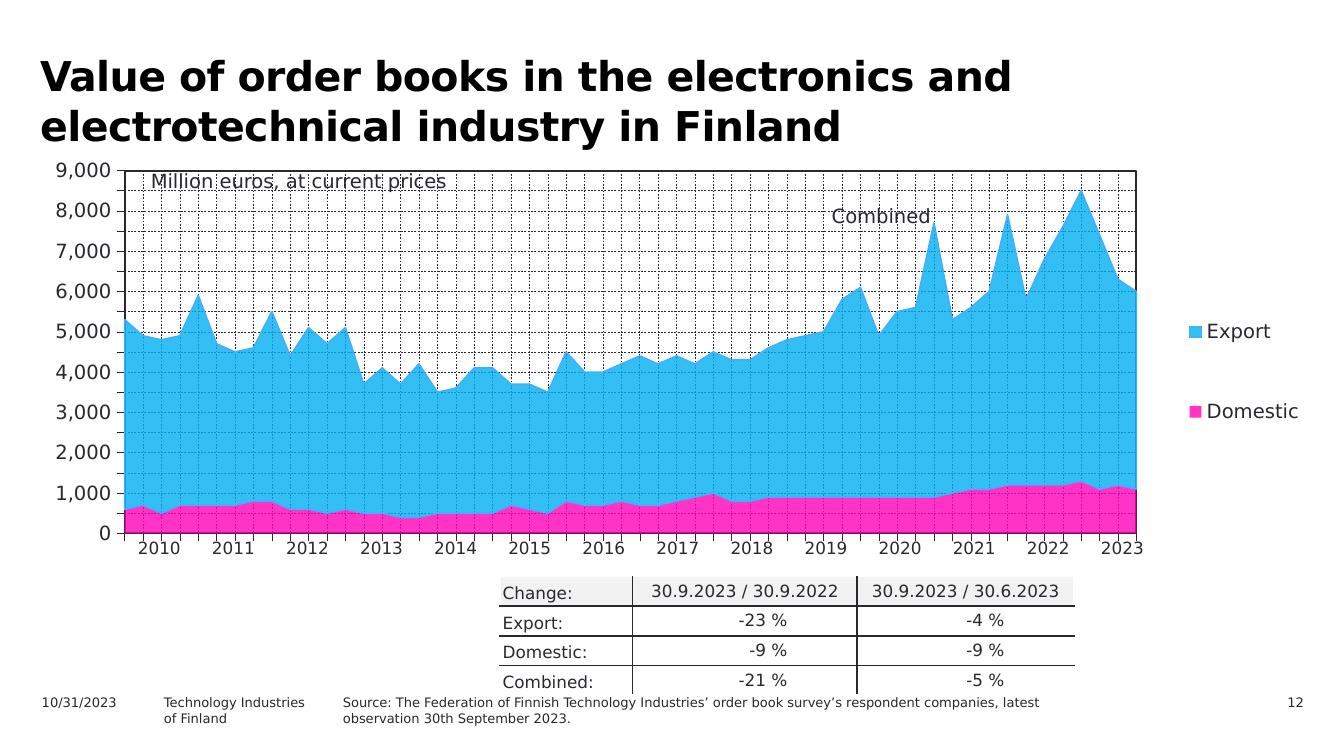
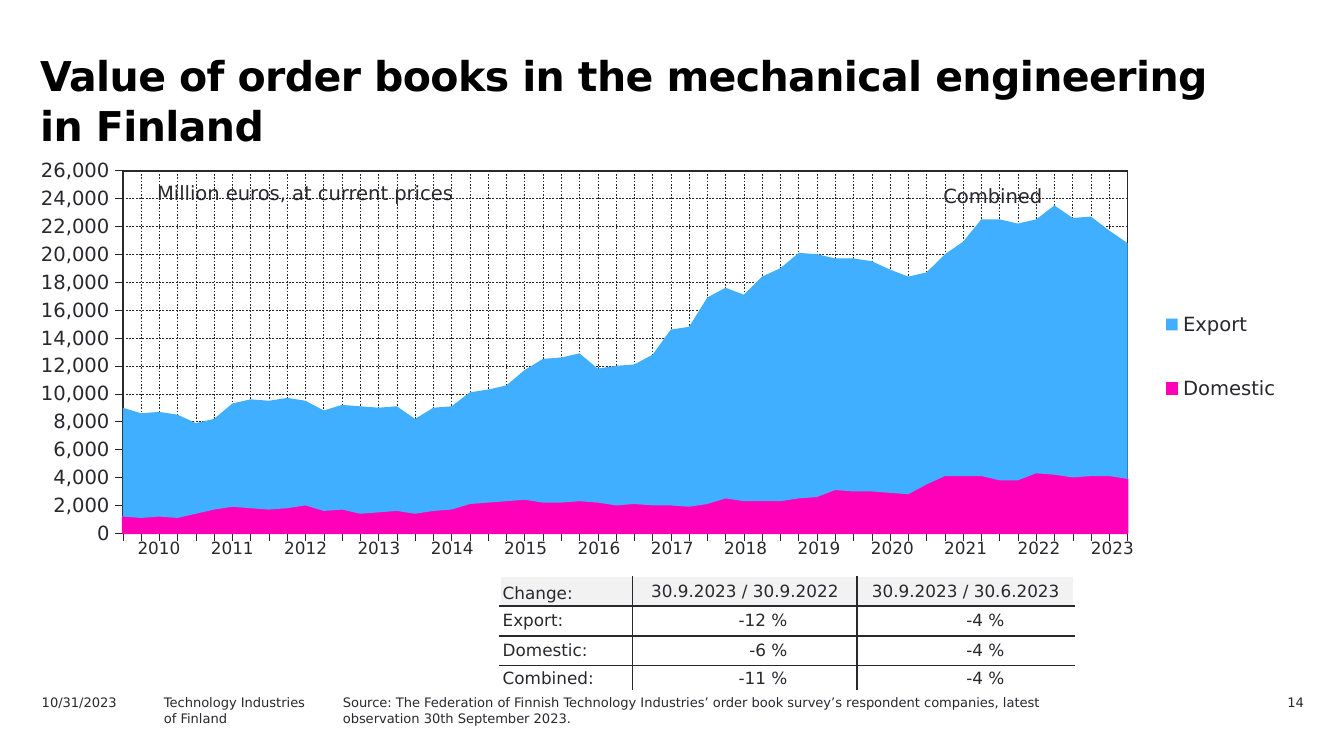
from collections import namedtuple

from lxml.etree import SubElement
from pptx import Presentation
from pptx.chart.data import CategoryChartData
from pptx.dml.color import RGBColor
from pptx.enum.chart import (
    XL_CHART_TYPE as ChartType,
    XL_LEGEND_POSITION as LegendPosition,
    XL_TICK_LABEL_POSITION as LabelPosition,
    XL_TICK_MARK as TickMark,
)
from pptx.enum.dml import MSO_LINE
from pptx.enum.text import MSO_ANCHOR as Anchor, PP_ALIGN as Align
from pptx.oxml import parse_xml
from pptx.oxml.ns import nsdecls, qn
from pptx.util import Cm, Pt

Box = namedtuple("Box", "left top width height")

# Shared look
FONT = "DejaVu Sans"
INK, BLACK, WHITE, HEADER_GREY = "29282E", "000000", "FFFFFF", "F2F2F2"
NO_TABLE_STYLE = "{2D5ABB26-0587-4C30-8999-92F81FD0307C}"
TITLE_BOX = Box(0.71, 0.93, 22.2, 1.8)
FOOTER_BOX = Box(0.79, 13.13, 23.85, 0.46)
CHANGE_BOX = Box(9.45, 10.9, 10.85, 2.24)
YEARS = range(2010, 2024)
PERIODS = ["30.9.2023 / 30.9.2022", "30.9.2023 / 30.6.2023"]
SOURCE = (
    "Source: The Federation of Finnish Technology Industries’ order book survey’s "
    "respondent companies, latest observation 30th September 2023."
)

# Content of each slide
ELECTRONICS = dict(
    title="Value of order books in the electronics and electrotechnical industry in Finland",
    number="12",
    chart_box=Box(0.51, 3, 24.61, 7.75),
    plot_width=0.777,
    legend_layout=(0.88, 0.255, 0.11, 0.53),
    maximum=9000,
    step=500,
    colors=["FF00B8", "00B0F0"],
    opacity=80,
    outlines=[None, "40AFFF"],
    unit_offset=(2.11, 0.07),
    combined_offset=(14.98, 0.76),
    years_width=19.61,
    source_width=13.41,
    last_row=0.56,
    label_anchor=Anchor.BOTTOM,
    changes=[("Export:", "-23 %", "-4 %"), ("Domestic:", "-9 %", "-9 %"),
             ("Combined:", "-21 %", "-5 %")],
    domestic=[
        600, 700, 500, 700, 700, 700, 700, 800, 800, 600, 600, 500, 600, 500,
        500, 400, 400, 500, 500, 500, 500, 700, 600, 500, 800, 700, 700, 800,
        700, 700, 800, 900, 1000, 800, 800, 900, 900, 900, 900, 900, 900, 900,
        900, 900, 900, 1000, 1100, 1100, 1200, 1200, 1200, 1200, 1300, 1100, 1200, 1100],
    export=[
        4700, 4200, 4300, 4200, 5200, 4000, 3800, 3800, 4700, 3800, 4500, 4200, 4500, 3200,
        3600, 3300, 3800, 3000, 3100, 3600, 3600, 3000, 3100, 3000, 3700, 3300, 3300, 3400,
        3700, 3500, 3600, 3300, 3500, 3500, 3500, 3700, 3900, 4000, 4100, 4900, 5200, 4000,
        4600, 4700, 6800, 4300, 4500, 4900, 6700, 4600, 5600, 6400, 7200, 6300, 5100, 4900],
)
MECHANICAL = dict(
    title="Value of order books in the mechanical engineering in Finland",
    number="14",
    chart_box=Box(0.51, 3, 24.13, 7.75),
    plot_width=0.787,
    legend_layout=(0.88, 0.275, 0.11, 0.415),
    maximum=26000,
    step=2000,
    colors=["FF00B8", "40AFFF"],
    opacity=100,
    outlines=["FF00B8", None],
    unit_offset=(2.23, 0.3),
    combined_offset=(17.09, 0.38),
    years_width=19.41,
    source_width=13.82,
    last_row=0.45,
    label_anchor=Anchor.MIDDLE,
    changes=[("Export:", "-12 %", "-4 %"), ("Domestic:", "-6 %", "-4 %"),
             ("Combined:", "-11 %", "-4 %")],
    domestic=[
        1200, 1100, 1200, 1100, 1400, 1700, 1900, 1800, 1700, 1800, 2000, 1600, 1700, 1400,
        1500, 1600, 1400, 1600, 1700, 2100, 2200, 2300, 2400, 2200, 2200, 2300, 2200, 2000,
        2100, 2000, 2000, 1900, 2100, 2500, 2300, 2300, 2300, 2500, 2600, 3100, 3000, 3000,
        2900, 2800, 3500, 4100, 4100, 4100, 3800, 3800, 4300, 4200, 4000, 4100, 4100, 3900],
    export=[
        7800, 7500, 7500, 7400, 6500, 6500, 7400, 7800, 7800, 7900, 7500, 7200, 7500, 7700,
        7500, 7500, 6800, 7400, 7400, 8000, 8100, 8300, 9300, 10300, 10400, 10600, 9600, 10000,
        10000, 10800, 12600, 12900, 14800, 15100, 14800, 16100, 16700, 17600, 17400, 16600,
        16700, 16500, 16000, 15600, 15200, 15900, 16800, 18400, 18700, 18400, 18200, 19300,
        18600, 18600, 17600, 16900],
)


def in_cm(box):
    return [Cm(length) for length in box]


def paint(color_format_owner, color):
    """Give a fill or a font the colour of a hex string."""
    if hasattr(color_format_owner, "solid"):
        color_format_owner.solid()
        color_format_owner = color_format_owner.fore_color
    else:
        color_format_owner = color_format_owner.color
    color_format_owner.rgb = RGBColor.from_string(color)


def style_font(font, size, color=INK, bold=False):
    font.name, font.size, font.bold = FONT, Pt(size), bold
    paint(font, color)


def style_line(line, width, color=INK, dash=None):
    paint(line.fill, color)
    line.width = Pt(width)
    if dash:
        line.dash_style = dash


def set_margins(frame, left, top, right, bottom):
    frame.margin_left, frame.margin_top = Cm(left), Cm(top)
    frame.margin_right, frame.margin_bottom = Cm(right), Cm(bottom)


def add_text(slide, box, text, size, align=Align.LEFT, margins=(0, 0, 0, 0), wrap=True):
    frame = slide.shapes.add_textbox(*in_cm(box)).text_frame
    set_margins(frame, *margins)
    frame.word_wrap = wrap
    frame.text = text
    for paragraph in frame.paragraphs:
        paragraph.alignment = align
        for run in paragraph.runs:
            style_font(run.font, size)


def add_title(slide, box, text):
    title = slide.shapes.title
    title.left, title.top, title.width, title.height = in_cm(box)
    frame = title.text_frame
    set_margins(frame, 0.05, 0, 0, 0)
    frame.word_wrap = True
    frame.vertical_anchor = Anchor.TOP
    frame.text = text
    paragraph = frame.paragraphs[0]
    paragraph.alignment = Align.LEFT
    paragraph.line_spacing = Pt(27)
    paragraph.space_before = Pt(0)
    run = paragraph.runs[0]
    style_font(run.font, 22, BLACK, bold=True)
    run.font._element.set("spc", "-30")


def manual_layout(x, y, width, height, inner=False):
    target = '<c:layoutTarget val="inner"/>' if inner else ""
    return parse_xml(
        f'<c:layout {nsdecls("c")}><c:manualLayout>{target}'
        '<c:xMode val="edge"/><c:yMode val="edge"/>'
        f'<c:x val="{x}"/><c:y val="{y}"/><c:w val="{width}"/><c:h val="{height}"/>'
        "</c:manualLayout></c:layout>"
    )


def set_layout(element, layout, position):
    for previous in element.findall(qn("c:layout")):
        element.remove(previous)
    element.insert(position, layout)


def add_order_chart(slide, box, content):
    data = CategoryChartData(number_format="#,##0")
    data.categories = [str(n + 1) for n in range(len(content["domestic"]))]
    data.add_series("Domestic", content["domestic"])
    data.add_series("Export", content["export"])
    chart = slide.shapes.add_chart(ChartType.AREA_STACKED, *in_cm(box), data).chart
    chart.has_title = False
    style_font(chart.font, 10.5)

    # Series
    for series, color, outline in zip(chart.plots[0].series, content["colors"], content["outlines"]):
        fill = series.format.fill
        paint(fill, color)
        if content["opacity"] < 100:
            swatch = series._element.find(".//" + qn("a:srgbClr"))
            SubElement(swatch, qn("a:alpha")).set("val", str(content["opacity"] * 1000))
        if outline:
            style_line(series.format.line, 0.88, outline)
        else:
            series.format.line.fill.background()

    # Axes
    values, quarters = chart.value_axis, chart.category_axis
    for axis in (values, quarters):
        axis.major_tick_mark = TickMark.OUTSIDE
        axis.minor_tick_mark = TickMark.NONE
        axis.has_major_gridlines = True
        style_line(axis.major_gridlines.format.line, 0.25, dash=MSO_LINE.DASH)
        style_line(axis.format.line, 0.22)
    quarters.tick_label_position = LabelPosition.NONE
    values.minimum_scale, values.maximum_scale = 0, content["maximum"]
    values.major_unit = content["step"]
    values.tick_labels.number_format = "#,##0"
    values.tick_labels.number_format_is_linked = False
    style_font(values.tick_labels.font, 10.5)
    values._element.find(qn("c:crossBetween")).set("val", "midCat")

    # Plot frame and legend
    plot_area = values._element.getparent()
    set_layout(plot_area, manual_layout(0.075, 0.029, content["plot_width"], 0.885, True), 0)
    plot_area.append(parse_xml(
        f'<c:spPr {nsdecls("c", "a")}><a:noFill/><a:ln w="12700"><a:solidFill>'
        f'<a:srgbClr val="{INK}"/></a:solidFill></a:ln></c:spPr>'
    ))
    chart.has_legend = True
    legend = chart.legend
    legend.position = LegendPosition.RIGHT
    legend.include_in_layout = False
    style_font(legend.font, 10.5)
    set_layout(legend._element, manual_layout(*content["legend_layout"]), 1)


def add_chart_notes(slide, box, content):
    notes = [("Million euros, at current prices", content["unit_offset"], 6.2, 0.13, False),
             ("Combined", content["combined_offset"], 2.69, 0.1, True)]
    for text, (right, down), width, inset, wrap in notes:
        note_box = Box(box.left + right, box.top + down, width, 0.69)
        add_text(slide, note_box, text, 10.5, margins=(0.23, inset, 0.23, inset), wrap=wrap)


def add_plain_table(slide, box, rows, columns):
    table = slide.shapes.add_table(rows, columns, *in_cm(box)).table
    table.first_row = table.horz_banding = False
    table._tbl.tblPr.find(qn("a:tableStyleId")).text = NO_TABLE_STYLE
    return table


def fill_cell(cell, text, align, anchor, margins):
    set_margins(cell, *margins)
    cell.vertical_anchor = anchor
    cell.text_frame.text = text
    paragraph = cell.text_frame.paragraphs[0]
    paragraph.alignment = align
    style_font(paragraph.runs[0].font, 9)


def border_cell(cell, colors):
    properties = cell._tc.get_or_add_tcPr()
    for position, (side, color) in enumerate(zip("LRTB", colors)):
        properties.insert(position, parse_xml(
            f'<a:ln{side} {nsdecls("a")} w="12700"><a:solidFill><a:srgbClr val="{color}"/>'
            f"</a:solidFill></a:ln{side}>"
        ))


def add_year_labels(slide, box):
    table = add_plain_table(slide, box, 1, len(YEARS))
    for column, year in enumerate(YEARS):
        table.columns[column].width = Cm(box.width / len(YEARS))
        cell = table.cell(0, column)
        fill_cell(cell, str(year), Align.CENTER, Anchor.TOP, (0, 0.13, 0, 0.13))
        cell.fill.background()


def add_change_table(slide, box, content):
    rows = [("Change:", *PERIODS), *content["changes"]]
    table = add_plain_table(slide, box, len(rows), 3)
    for column, width in zip(table.columns, (2.5, 4.25, 4.1)):
        column.width = Cm(width)
    for r, texts in enumerate(rows):
        last = r == len(rows) - 1
        table.rows[r].height = Cm(content["last_row"] if last else 0.56)
        for c, text in enumerate(texts):
            cell = table.cell(r, c)
            anchor, align, right = Anchor.MIDDLE, Align.CENTER, 0.05
            if c == 0:
                align = Align.LEFT
                anchor = content["label_anchor"] if r else Anchor.BOTTOM
            elif r:
                align, right = Align.RIGHT, 1.32
            fill_cell(cell, text, align, anchor, (0.05, 0.05, right, 0.05))
            paint(cell.fill, WHITE if r else HEADER_GREY)
            outer = (c == 0, c == 2, r == 0, last)
            border_cell(cell, [WHITE if edge else INK for edge in outer])


def add_footer(slide, box, content):
    parts = [
        ("10/31/2023", 0, 2.2, Align.LEFT),
        ("Technology Industries\nof Finland", 2.31, 3.3, Align.LEFT),
        (SOURCE, 5.69, content["source_width"], Align.LEFT),
        (content["number"], box.width - 2.4, 2.4, Align.RIGHT),
    ]
    for text, offset, width, align in parts:
        add_text(slide, Box(box.left + offset, box.top, width, box.height), text, 7, align)


def add_order_book_slide(presentation, content):
    slide = presentation.slides.add_slide(presentation.slide_layouts[5])
    chart_box = content["chart_box"]
    add_title(slide, TITLE_BOX, content["title"])
    add_order_chart(slide, chart_box, content)
    add_chart_notes(slide, chart_box, content)
    add_change_table(slide, CHANGE_BOX, content)
    add_year_labels(
        slide, Box(chart_box.left + 1.8, chart_box.top + 7.06, content["years_width"], 0.79))
    add_footer(slide, FOOTER_BOX, content)


def main():
    presentation = Presentation()
    presentation.slide_width, presentation.slide_height = Cm(25.4), Cm(14.29)
    for content in (ELECTRONICS, MECHANICAL):
        add_order_book_slide(presentation, content)
    presentation.save("out.pptx")


if __name__ == "__main__":
    main()
